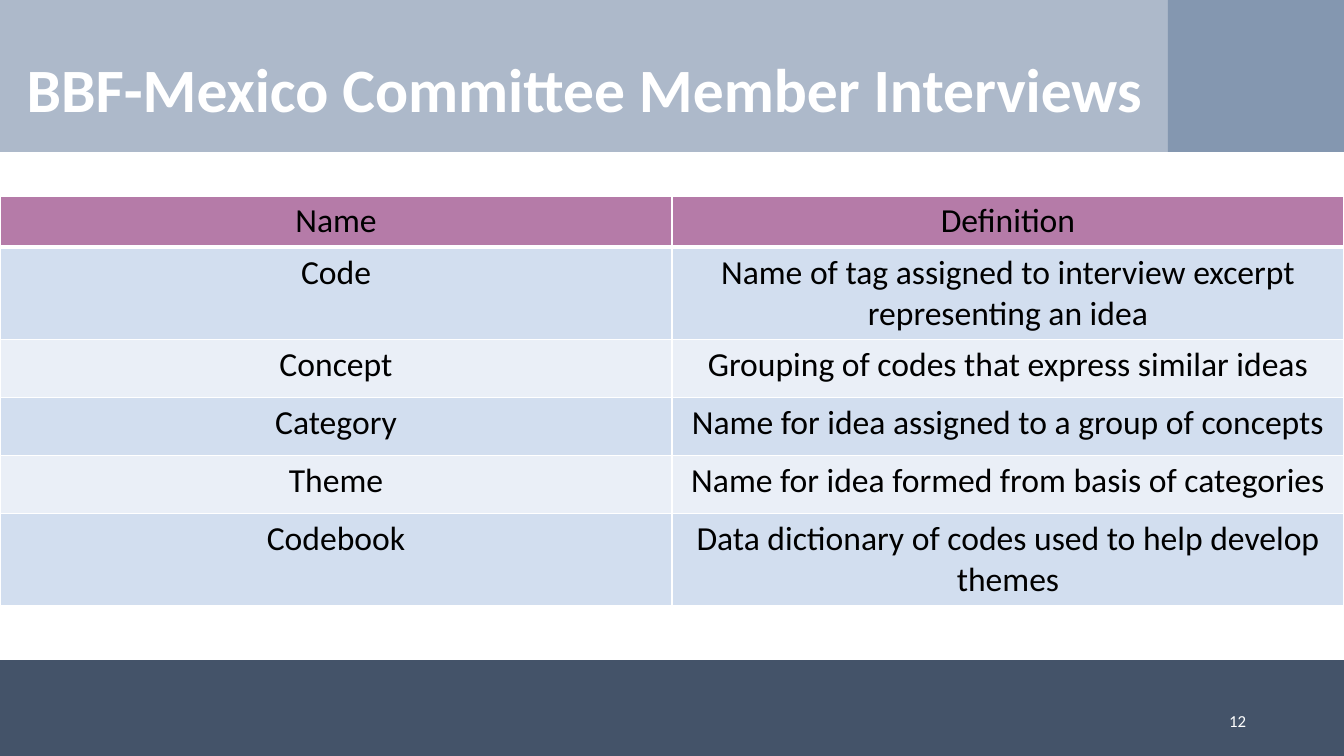
from lxml import etree
from pptx import Presentation
from pptx import util as u
from pptx.dml.color import RGBColor
from pptx.enum import shapes, text
from pptx.oxml import ns

TITLE = "BBF-Mexico Committee Member Interviews"
PAGE_NUMBER = "12"
ROWS = [
    ("Name", "Definition"),
    ("Code", "Name of tag assigned to interview excerpt representing an idea"),
    ("Concept", "Grouping of codes that express similar ideas"),
    ("Category", "Name for idea assigned to a group of concepts"),
    ("Theme", "Name for idea formed from basis of categories"),
    ("Codebook", "Data dictionary of codes used to help develop themes"),
]
COLORS = {
    "band": "ADB9CA",
    "footer": "445369",
    "accent": "8497B0",
    "header": "B57BA8",
    "odd": "D2DEEF",
    "even": "EAEFF7",
    "white": "FFFFFF",
    "black": "000000",
}
FONT = "Calibri"
WIDTH, HEIGHT = 1344, 756
BANDS = [
    ("band", 0, 0, WIDTH, 152),
    ("footer", 0, 660, WIDTH, 96),
    ("accent", 1168, 0, 176, 152),
]
TABLE_TOP, HEADER_HEIGHT, ROW_HEIGHT = 196, 34, 58
SCALE = u.Inches(7.5) / HEIGHT


def px(*lengths):
    return [u.Emu(round(length * SCALE)) for length in lengths]


def color(name):
    return RGBColor.from_string(COLORS[name])


def write(frame, content, size, color_name, alignment, bold=False):
    paragraph = frame.paragraphs[0]
    paragraph.text = content
    paragraph.alignment = alignment
    font = paragraph.font
    font.name, font.size, font.bold = FONT, u.Pt(size), bold
    font.color.rgb = color(color_name)
    return paragraph


def add_borders(cell, widths):
    properties = cell._tc.get_or_add_tcPr()
    for side, width in widths.items():
        line = etree.SubElement(properties, ns.qn(f"a:ln{side}"), w=str(u.Pt(width)))
        fill = etree.SubElement(line, ns.qn("a:solidFill"))
        etree.SubElement(fill, ns.qn("a:srgbClr"), val=COLORS["white"])


def add_bands(slide):
    for name, *box in BANDS:
        band = slide.shapes.add_shape(shapes.MSO_SHAPE.RECTANGLE, *px(*box))
        band.shadow.inherit = False
        band.fill.solid()
        band.fill.fore_color.rgb = color(name)
        band.line.fill.background()


def add_definitions(slide):
    height = HEADER_HEIGHT + ROW_HEIGHT * (len(ROWS) - 1)
    table = slide.shapes.add_table(
        len(ROWS), len(ROWS[0]), *px(0, TABLE_TOP, WIDTH, height)
    ).table
    table.first_row = table.horz_banding = False
    for index, row in enumerate(ROWS):
        header = index == 0
        table.rows[index].height = px(HEADER_HEIGHT if header else ROW_HEIGHT)[0]
        fill_name = "header" if header else "odd" if index % 2 else "even"
        for column, content in enumerate(row):
            cell = table.cell(index, column)
            write(cell.text_frame, content, 24, "black", text.PP_ALIGN.CENTER)
            top, bottom = 3 if index == 1 else 1, 3 if header else 1
            add_borders(cell, {"L": 1, "R": 1, "T": top, "B": bottom})
            cell.fill.solid()
            cell.fill.fore_color.rgb = color(fill_name)


def add_page_number(slide):
    frame = slide.shapes.add_textbox(*px(1151, 701, 105, 40)).text_frame
    frame.word_wrap = True
    frame.vertical_anchor = text.MSO_ANCHOR.MIDDLE
    write(frame, PAGE_NUMBER, 12, "white", text.PP_ALIGN.RIGHT)


def place_title(slide):
    title = slide.shapes.title
    title.left, title.top, title.width, title.height = px(0, 52, 1170, 81)
    frame = title.text_frame
    frame.auto_size = text.MSO_AUTO_SIZE.NONE
    frame.vertical_anchor = text.MSO_ANCHOR.MIDDLE
    paragraph = write(frame, TITLE, 44, "white", text.PP_ALIGN.CENTER, bold=True)
    paragraph.line_spacing = u.Pt(46)
    title.element.getparent().append(title.element)


def main():
    presentation = Presentation()
    presentation.slide_width, presentation.slide_height = px(WIDTH, HEIGHT)
    slide = presentation.slides.add_slide(presentation.slide_layouts[5])
    add_bands(slide)
    add_definitions(slide)
    add_page_number(slide)
    place_title(slide)
    presentation.save("out.pptx")


if __name__ == "__main__":
    main()
